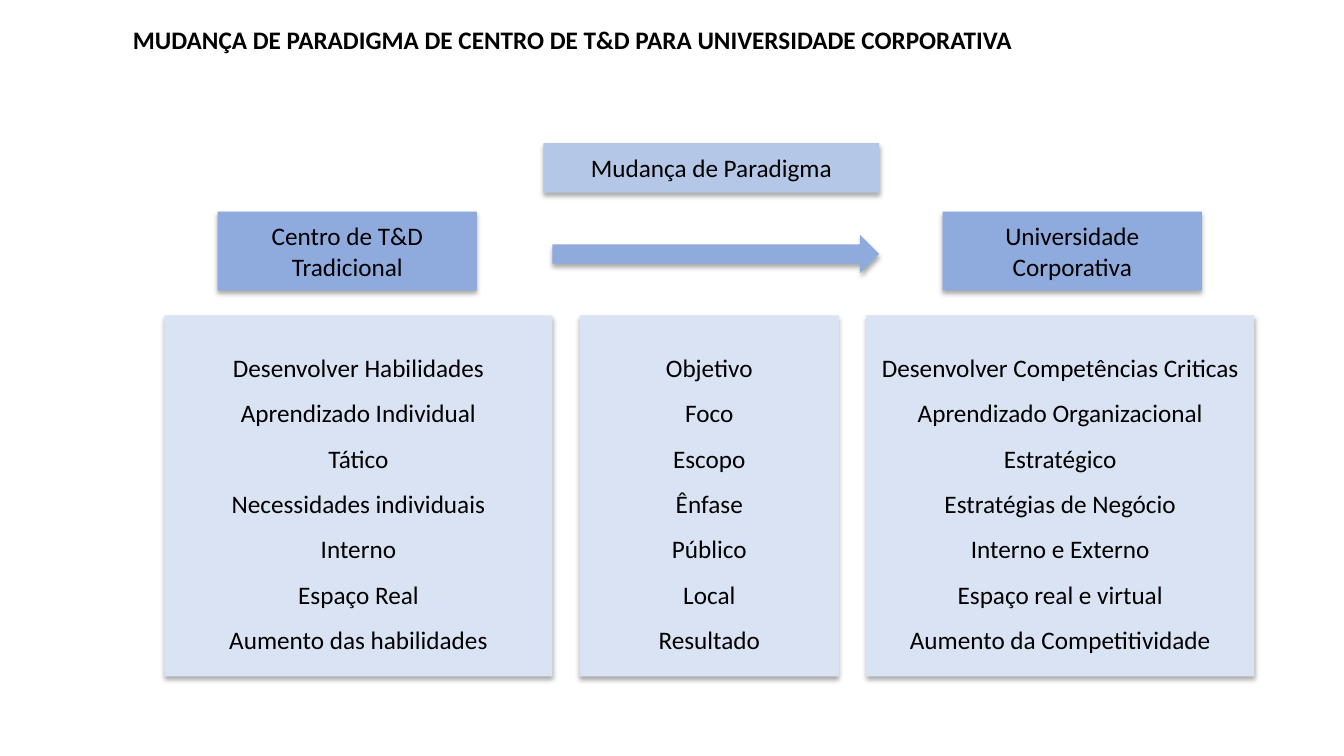
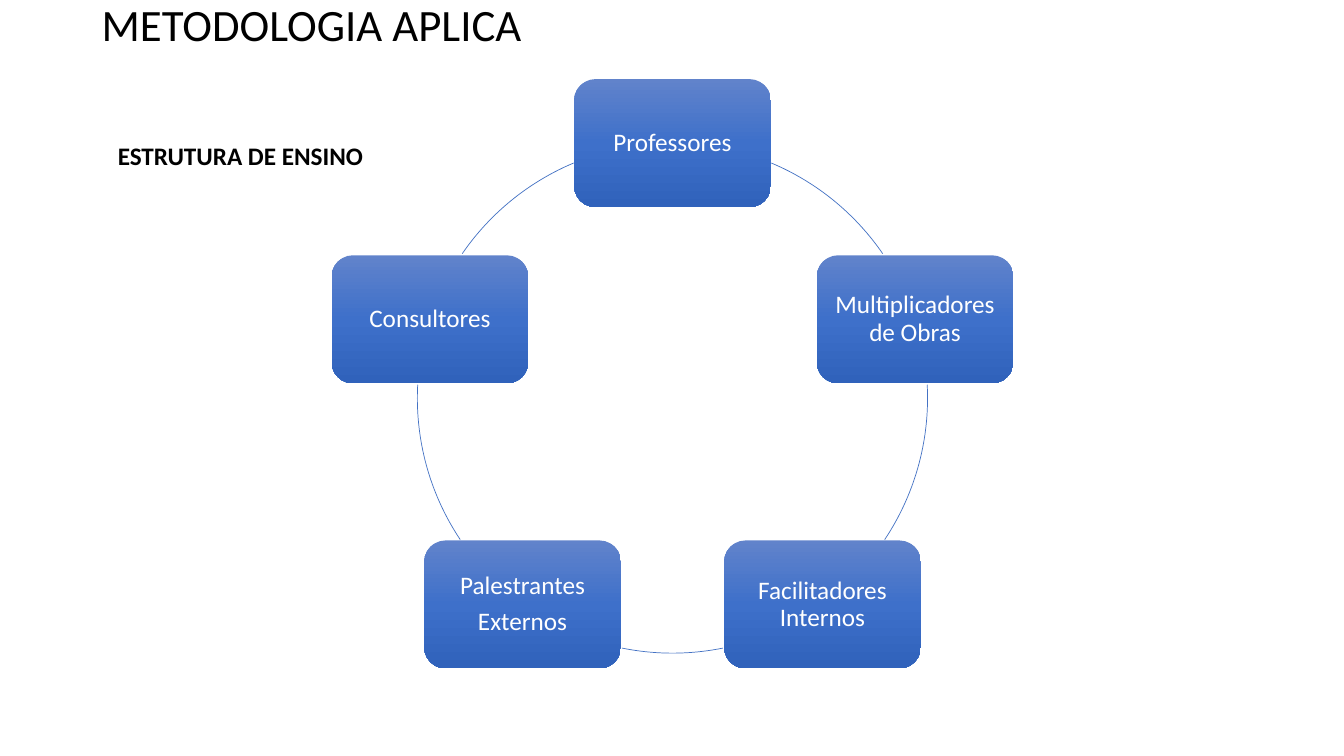
from copy import deepcopy
from math import cos, radians, sin

from lxml import etree
from pptx import Presentation
from pptx.dml.color import RGBColor
from pptx.enum import shapes, text
from pptx.oxml import ns
from pptx.util import Inches, Pt

FONT = "Calibri"
BLACK, WHITE = "000000", "FFFFFF"
PALE, LIGHT, MID, BLUE = "DAE3F3", "B4C7E7", "8FAADC", "4472C4"
GRAD = [(0, "6183CB"), (0.5, "3E70CA"), (1, "3062BB")]
KIND = shapes.MSO_SHAPE

HEADS = [
    ("Mudança de Paradigma", LIGHT, (5.39, 1.42, 3.33, 0.49)),
    ("Centro de T&D Tradicional", MID, (2.16, 2.1, 2.57, 0.78)),
    ("Universidade Corporativa", MID, (9.35, 2.1, 2.57, 0.78)),
]
ROWS = [
    ("Desenvolver Habilidades", "Objetivo", "Desenvolver Competências Criticas"),
    ("Aprendizado Individual", "Foco", "Aprendizado Organizacional"),
    ("Tático", "Escopo", "Estratégico"),
    ("Necessidades individuais", "Ênfase", "Estratégias de Negócio"),
    ("Interno", "Público", "Interno e Externo"),
    ("Espaço Real", "Local", "Espaço real e virtual"),
    ("Aumento das habilidades", "Resultado", "Aumento da Competitividade"),
]
WIDTHS, LEFT, GAP = (3.85, 2.57, 3.85), 1.63, 0.27

NODES = [
    ["Professores"],
    ["Multiplicadores de Obras"],
    ["Facilitadores Internos"],
    ["Palestrantes", "Externos"],
    ["Consultores"],
]
ARCS = [(292.8, 325.5), (357, 33.7), (78.6, 101.4), (146.3, 183), (214.5, 247.2)]
MIDX, MIDY, RADIUS = 6.67, 3.95, 2.53
NODEW, NODEH = 1.95, 1.27


def rgb(code):
    """Turn a hex string into a colour."""
    return RGBColor.from_string(code)


def write(shape, lines, size=18, color=BLACK, bold=False, align="CENTER",
          anchor="MIDDLE", space=None, after=None, inset=None):
    """Fill a shape with one paragraph per line."""
    frame = shape.text_frame
    frame.word_wrap = True
    frame.vertical_anchor = getattr(text.MSO_ANCHOR, anchor)
    if inset is not None:
        frame.margin_left = frame.margin_right = Inches(inset)
        frame.margin_top = frame.margin_bottom = Inches(inset)
    for i, line in enumerate(lines):
        par = frame.add_paragraph() if i else frame.paragraphs[0]
        par.alignment = getattr(text.PP_ALIGN, align)
        if space:
            par.line_spacing = space
        if after:
            par.space_after = Pt(after)
        run = par.add_run()
        run.text = line
        run.font.name, run.font.size, run.font.bold = FONT, Pt(size), bold
        run.font.color.rgb = rgb(color)


def label(slide, line, box, **style):
    """Add a left-aligned text box."""
    area = slide.shapes.add_textbox(*map(Inches, box))
    write(area, [line], align="LEFT", **style)


def draw(slide, kind, box):
    """Add a preset shape without line or shadow."""
    shape = slide.shapes.add_shape(kind, *map(Inches, box))
    shape.shadow.inherit = False
    shape.line.fill.background()
    return shape


def panel(slide, kind, box, fill):
    """Add a flat coloured shape with a soft shadow below it."""
    shape = draw(slide, kind, box)
    shape.fill.solid()
    shape.fill.fore_color.rgb = rgb(fill)
    effect = shape._element.spPr.find(ns.qn("a:effectLst"))
    glow = etree.SubElement(effect, ns.qn("a:outerShdw"), blurRad=str(Pt(3.5)),
                            dist=str(Pt(2.2)), dir="5400000", rotWithShape="0")
    tint = etree.SubElement(glow, ns.qn("a:srgbClr"), val=BLACK)
    etree.SubElement(tint, ns.qn("a:alpha"), val="32000")
    return shape


def shade(shape):
    """Give a shape the three-stop vertical gradient."""
    shape.fill.gradient()
    shape.fill.gradient_angle = 270
    stops = shape._element.spPr.find(".//" + ns.qn("a:gsLst"))
    stops.append(deepcopy(stops[-1]))
    for stop, (place, code) in zip(shape.fill.gradient_stops, GRAD):
        stop.position = place
        stop.color.rgb = rgb(code)


def shift(slide):
    """Build the comparison of the two training models."""
    for line, fill, box in HEADS:
        write(panel(slide, KIND.RECTANGLE, box, fill), [line])
    left = LEFT
    for width, lines in zip(WIDTHS, zip(*ROWS)):
        card = panel(slide, KIND.RECTANGLE, (left, 3.13, width, 3.58), PALE)
        write(card, lines, space=1.5)
        left += width + GAP
    panel(slide, KIND.RIGHT_ARROW, (5.48, 2.33, 3.24, 0.38), MID)
    label(slide, "MUDANÇA DE PARADIGMA DE CENTRO DE T&D PARA UNIVERSIDADE CORPORATIVA",
          (1.22, 0.19, 9.73, 0.4), bold=True, anchor="TOP")


def cycle(slide):
    """Build the ring of teaching roles."""
    label(slide, "ESTRUTURA DE ENSINO", (1.07, 1.34, 9.73, 0.4),
          bold=True, anchor="TOP")
    ring = (MIDX - RADIUS, MIDY - RADIUS, 2 * RADIUS, 2 * RADIUS)
    for i, (lines, ends) in enumerate(zip(NODES, ARCS)):
        turn = radians(360 / len(NODES) * i - 90)
        x, y = MIDX + RADIUS * cos(turn), MIDY + RADIUS * sin(turn)
        node = draw(slide, KIND.ROUNDED_RECTANGLE,
                    (x - NODEW / 2, y - NODEH / 2, NODEW, NODEH))
        shade(node)
        write(node, lines, color=WHITE, space=0.9, after=6.3, inset=0.07)
        arc = draw(slide, KIND.ARC, ring)
        arc.fill.background()
        arc.line.color.rgb = rgb(BLUE)
        arc.line.width = Pt(0.5)
        for k, angle in enumerate(ends):
            arc.adjustments[k] = angle * 0.6
    label(slide, "METODOLOGIA APLICA", (0.91, -0.11, 9.89, 0.76),
          size=32, space=0.9)


def main():
    """Build and save the deck."""
    deck = Presentation()
    deck.slide_width, deck.slide_height = Inches(13.33), Inches(7.5)
    for build in (shift, cycle):
        build(deck.slides.add_slide(deck.slide_layouts[6]))
    deck.save("out.pptx")


if __name__ == "__main__":
    main()
